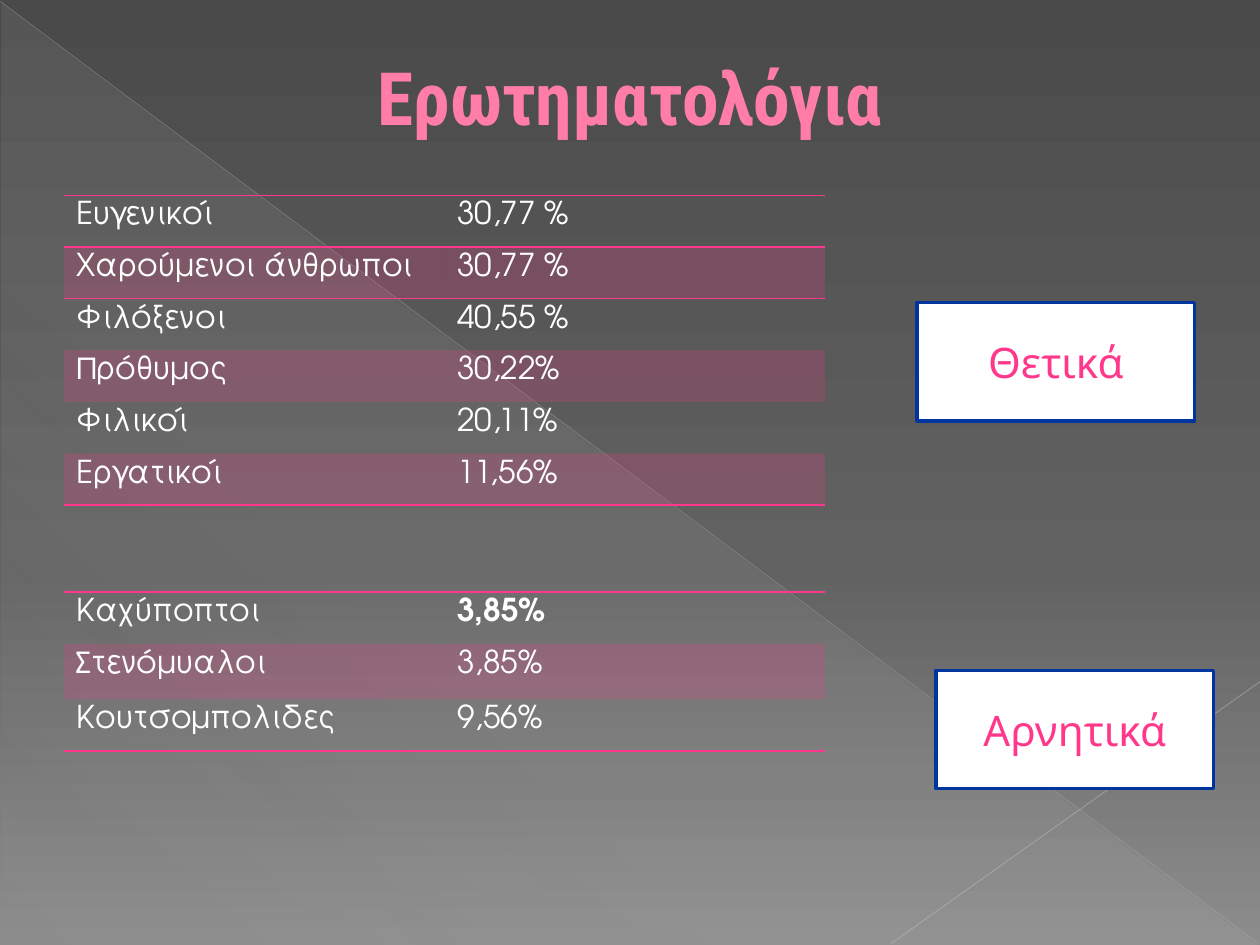
from lxml.etree import SubElement
from pptx import Presentation
from pptx.dml.color import RGBColor
from pptx.enum.shapes import MSO_CONNECTOR, MSO_SHAPE
from pptx.enum.text import MSO_ANCHOR, PP_ALIGN
from pptx.oxml import parse_xml
from pptx.oxml.ns import nsdecls, qn
from pptx.util import Inches, Pt

WIDTH, HEIGHT = 10, 7.5
PINK = RGBColor(0xFF, 0x38, 0x8C)
TITLE_PINK = RGBColor(0xFF, 0x7D, 0xA7)
TITLE_EDGE = RGBColor(0xB1, 0x27, 0x61)
BLUE = RGBColor(0x00, 0x34, 0x9E)
WHITE = RGBColor(0xFF, 0xFF, 0xFF)
DARK = RGBColor(0x4A, 0x4A, 0x4A)
MIDDLE = RGBColor(0x62, 0x62, 0x62)
LIGHT = RGBColor(0x8C, 0x8C, 0x8C)
SHEEN = RGBColor(0xD2, 0xD2, 0xD2)
FALLING_GREY = RGBColor(0xBF, 0xBF, 0xBF)
RISING_GREY = RGBColor(0xC6, 0xC6, 0xC6)

TITLE = "Ερωτηματολόγια"
# Each group: top, row heights, rows, ruled lines (row boundaries), label and its place
GROUPS = [
    {
        "top": 1.55, "heights": [0.41] * 6, "rules": (0, 1, 6),
        "rows": [
            ("Ευγενικοί", "30,77 %"),
            ("Χαρούμενοι άνθρωποι", "30,77 %"),
            ("Φιλόξενοι", "40,55 %"),
            ("Πρόθυμος", "30,22%"),
            ("Φιλικοί", "20,11%"),
            ("Εργατικοί", "11,56%"),
        ],
        "bold": (), "label": "Θετικά", "label_at": (7.28, 2.4),
    },
    {
        "top": 4.7, "heights": [0.41, 0.44, 0.41], "rules": (0, 3),
        "rows": [
            ("Καχύποπτοι", "3,85%"),
            ("Στενόμυαλοι", "3,85%"),
            ("Κουτσομπολιδες", "9,56%"),
        ],
        "bold": ((0, 1),), "label": "Αρνητικά", "label_at": (7.43, 5.32),
    },
]
TABLE_LEFT, COLUMN_WIDTH = 0.51, 3.02
LABEL_SIZE = (2.2, 0.94)
BACKDROP_STOPS = [(0, DARK, 100), (60, MIDDLE, 100), (100, LIGHT, 100)]
SHEEN_STOPS = [(0, SHEEN, 10), (70, SHEEN, 8), (100, SHEEN, 1)]
# Start, end, colour, width in points, opacity in percent
DIAGONALS = [
    ((0, 0.01), (9.99, 7.49), FALLING_GREY, 0.39, 35),
    ((10, 5.41), (7.07, 7.49), RISING_GREY, 0.47, 45),
]
PLAIN_TABLE_STYLE = "{2D5ABB26-0587-4C30-8999-92F81FD0307C}"


def inches(*lengths):
    return [Inches(length) for length in lengths]


def set_opacity(owner, percent):
    """Make the solid colours below an XML element partly transparent."""
    for colour in owner.iter(qn("a:srgbClr")):
        SubElement(colour, qn("a:alpha"), val=str(percent * 1000))


def set_gradient(fill, owner, stops, angle):
    """Give a fill a linear gradient of (position, colour, opacity) stops."""
    fill.gradient()
    gradient = owner.find(".//" + qn("a:gradFill"))
    stop_list = gradient.find(qn("a:gsLst"))
    for old in list(stop_list):
        stop_list.remove(old)
    for position, colour, opacity in stops:
        stop = SubElement(stop_list, qn("a:gs"), pos=str(position * 1000))
        SubElement(stop, qn("a:srgbClr"), val=str(colour))
        set_opacity(stop, opacity)
    gradient.find(qn("a:lin")).set("ang", str(angle * 60000))


def line_xml(tag, colour, points):
    return parse_xml(
        f'<a:{tag} {nsdecls("a")} w="{Pt(points)}"><a:solidFill>'
        f'<a:srgbClr val="{colour}"/></a:solidFill></a:{tag}>'
    )


def write(paragraph, text, font, size, colour, bold=False):
    run = paragraph.add_run()
    run.text = text
    run.font.name, run.font.size, run.font.bold = font, Pt(size), bold
    run.font.color.rgb = colour
    return run


def add_backdrop(slide):
    fill = slide.background.fill
    set_gradient(fill, slide.element, BACKDROP_STOPS, 90)
    triangle = slide.shapes.add_shape(
        MSO_SHAPE.RIGHT_TRIANGLE, *inches(0.01, 0.02, 9.98, 7.48))
    triangle.shadow.inherit = False
    triangle.line.fill.background()
    set_gradient(triangle.fill, triangle.element, SHEEN_STOPS, 133)
    for start, end, colour, width, opacity in DIAGONALS:
        diagonal = slide.shapes.add_connector(
            MSO_CONNECTOR.STRAIGHT, *inches(*start, *end))
        diagonal.line.color.rgb = colour
        diagonal.line.width = Pt(width)
        properties = diagonal.element.spPr
        set_opacity(properties, opacity)
        SubElement(properties, qn("a:effectLst"))


def add_title(slide):
    title = slide.shapes.title
    title.left, title.top, title.width, title.height = inches(0.5, 0.29, 9, 0.94)
    title.text_frame.vertical_anchor = MSO_ANCHOR.MIDDLE
    paragraph = title.text_frame.paragraphs[0]
    paragraph.alignment = PP_ALIGN.CENTER
    run = write(paragraph, TITLE, "Roboto Condensed", 42, TITLE_PINK, True)
    run.font._element.insert(0, line_xml("ln", TITLE_EDGE, 0.5))
    slide.shapes._spTree.append(title.element)  # in front of the backdrop


def fill_cell(cell, text, bold, banded, edges):
    write(cell.text_frame.paragraphs[0], text, "TeX Gyre Adventor", 18, WHITE, bold)
    properties = cell._tc.get_or_add_tcPr()
    if banded:
        cell.fill.solid()
        cell.fill.fore_color.rgb = PINK
        set_opacity(properties, 20)
    else:
        cell.fill.background()
    for index, edge in enumerate(edges):
        properties.insert(index, line_xml(edge, PINK, 1))


def add_answers(slide, group):
    rows, heights = group["rows"], group["heights"]
    frame = slide.shapes.add_table(len(rows), 2, *inches(
        TABLE_LEFT, group["top"], 2 * COLUMN_WIDTH, sum(heights)))
    table = frame.table
    table.first_row = table.horz_banding = False
    table._tbl.tblPr.find(qn("a:tableStyleId")).text = PLAIN_TABLE_STYLE
    for r, (answers, height) in enumerate(zip(rows, heights)):
        table.rows[r].height = Inches(height)
        edges = [tag for tag, boundary in (("lnT", r), ("lnB", r + 1))
                 if boundary in group["rules"]]
        for c, text in enumerate(answers):
            bold = (r, c) in group["bold"]
            fill_cell(table.cell(r, c), text, bold, r % 2 == 1, edges)


def add_label(slide, group):
    box = slide.shapes.add_shape(
        MSO_SHAPE.RECTANGLE, *inches(*group["label_at"], *LABEL_SIZE))
    box.shadow.inherit = False
    box.fill.solid()
    box.fill.fore_color.rgb = WHITE
    box.line.color.rgb = BLUE
    box.line.width = Pt(2)
    box.text_frame.vertical_anchor = MSO_ANCHOR.MIDDLE
    paragraph = box.text_frame.paragraphs[0]
    paragraph.alignment = PP_ALIGN.CENTER
    write(paragraph, group["label"], "Montserrat", 24, PINK)


def main():
    deck = Presentation()
    deck.slide_width, deck.slide_height = inches(WIDTH, HEIGHT)
    slide = deck.slides.add_slide(deck.slide_layouts.get_by_name("Title Only"))
    add_backdrop(slide)
    add_title(slide)
    for group in GROUPS:
        add_answers(slide, group)
    for group in GROUPS:
        add_label(slide, group)
    deck.save("out.pptx")


if __name__ == "__main__":
    main()
